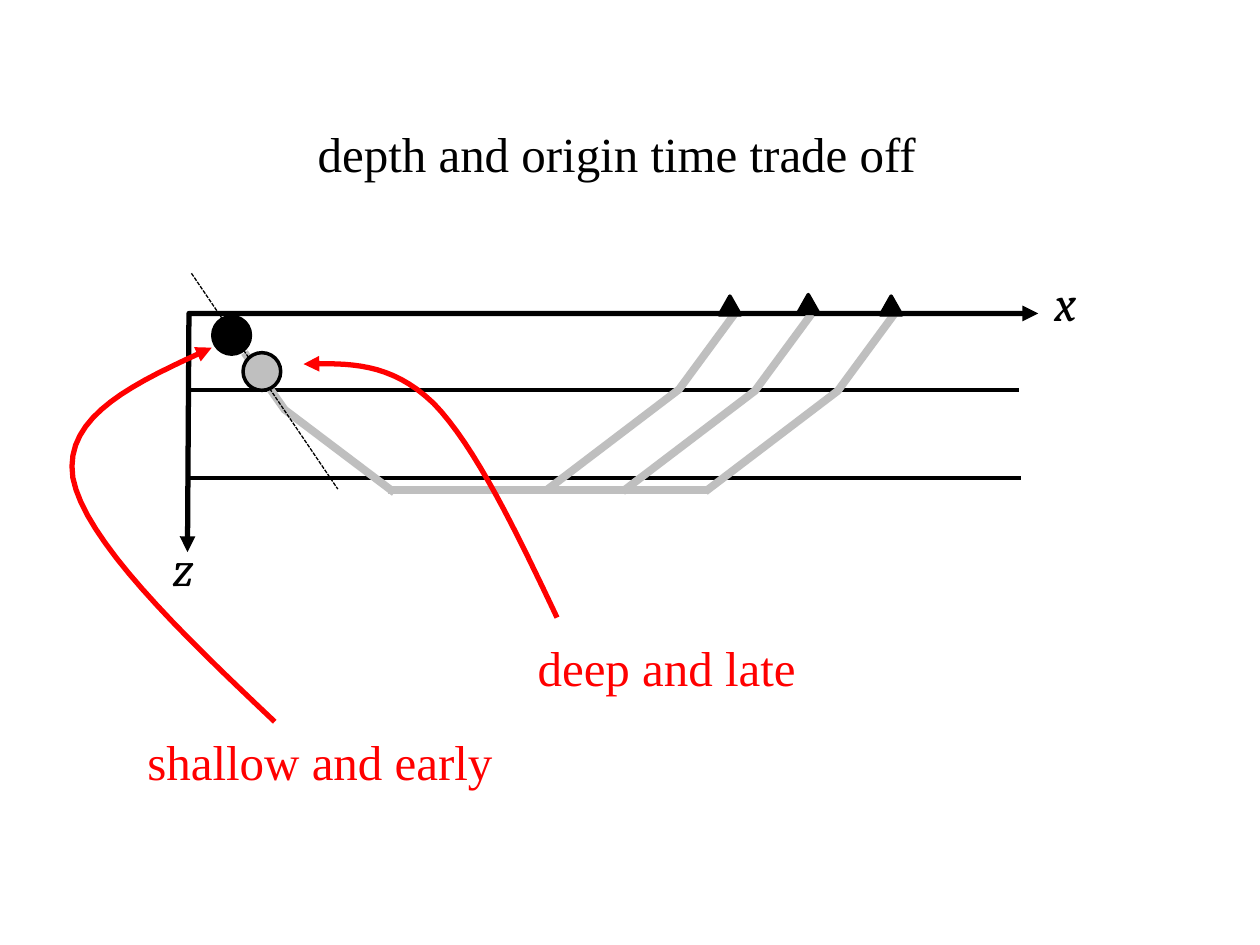
import pptx
import pptx.dml.color
import pptx.enum.dml
import pptx.enum.shapes
import pptx.enum.text
import pptx.oxml
import pptx.oxml.ns
import pptx.util
from pptx.util import Cm

BLACK = pptx.dml.color.RGBColor(0x00, 0x00, 0x00)
GREY = pptx.dml.color.RGBColor(0xBF, 0xBF, 0xBF)
RED = pptx.dml.color.RGBColor(0xFF, 0x00, 0x00)
SERIF = "Times New Roman"
SYMBOL = "Cambria"
CURVE_STEPS = 16


def format_line(shape, color, width, ends=()):
    shape.line.color.rgb = color
    shape.line.width = pptx.util.Pt(width)
    line_element = shape.line._get_or_add_ln()
    for end in ends:
        arrowhead = pptx.oxml.parse_xml(
            f'<a:{end} {pptx.oxml.ns.nsdecls("a")} type="triangle"/>'
        )
        line_element.append(arrowhead)


def add_straight_line(slide, start, end, color, width):
    connector = slide.shapes.add_connector(
        pptx.enum.shapes.MSO_CONNECTOR.STRAIGHT,
        Cm(start[0]), Cm(start[1]), Cm(end[0]), Cm(end[1]),
    )
    format_line(connector, color, width)
    effects = pptx.oxml.parse_xml(f'<a:effectLst {pptx.oxml.ns.nsdecls("a")}/>')
    connector._element.spPr.append(effects)
    return connector


def add_path(slide, points, color, width, ends=()):
    corners = [(Cm(x), Cm(y)) for x, y in points]
    builder = slide.shapes.build_freeform(*corners[0])
    builder.add_line_segments(corners[1:], close=False)
    shape = builder.convert_to_shape()
    shape.shadow.inherit = False
    shape.fill.background()
    format_line(shape, color, width, ends)


def bezier_point(controls, t):
    weights = ((1 - t) ** 3, 3 * t * (1 - t) ** 2, 3 * t ** 2 * (1 - t), t ** 3)
    return tuple(
        sum(weight * control[axis] for weight, control in zip(weights, controls))
        for axis in (0, 1)
    )


def add_curved_arrow(slide, controls):
    points = [controls[0]]
    for first in range(0, len(controls) - 1, 3):
        segment = controls[first:first + 4]
        points += [
            bezier_point(segment, step / CURVE_STEPS)
            for step in range(1, CURVE_STEPS + 1)
        ]
    add_path(slide, points, RED, 3, ["headEnd"])


def add_marker(slide, kind, left, top, width, height, color):
    shape = slide.shapes.add_shape(kind, Cm(left), Cm(top), Cm(width), Cm(height))
    shape.shadow.inherit = False
    shape.fill.solid()
    shape.fill.fore_color.rgb = color
    format_line(shape, BLACK, 2)


def format_text(shape, text, font_name, color, alignment, italic=False):
    text_frame = shape.text_frame
    text_frame.text = text
    text_frame.word_wrap = True
    text_frame.auto_size = pptx.enum.text.MSO_AUTO_SIZE.SHAPE_TO_FIT_TEXT
    text_frame.vertical_anchor = pptx.enum.text.MSO_ANCHOR.TOP
    paragraph = text_frame.paragraphs[0]
    paragraph.alignment = alignment
    font = paragraph.runs[0].font
    font.name = font_name
    font.size = pptx.util.Pt(28)
    font.italic = italic
    font.color.rgb = color


def add_label(slide, text, left, top, width, font_name, color, italic=False):
    label = slide.shapes.add_textbox(Cm(left), Cm(top), Cm(width), Cm(1.45))
    format_text(label, text, font_name, color, pptx.enum.text.PP_ALIGN.CENTER, italic)


def set_title(slide, text):
    title = slide.shapes.title
    title.left, title.top = Cm(6.15), Cm(2.36)
    title.width, title.height = Cm(12.7), Cm(1.45)
    format_text(title, text, SERIF, BLACK, pptx.enum.text.PP_ALIGN.LEFT)


def add_layers(slide):
    axes = [(3.78, 11.13), (3.81, 6.32), (20.93, 6.32)]
    add_path(slide, axes, BLACK, 3, ["headEnd", "tailEnd"])
    for left, depth in [(3.81, 9.63), (3.78, 7.87)]:
        add_straight_line(slide, (left, depth), (left + 16.77, depth), BLACK, 2.25)


def add_rays(slide):
    add_path(slide, [(7.95, 9.93), (5.74, 8.26), (4.93, 7.11)], GREY, 4.5)
    add_straight_line(slide, (7.82, 9.88), (14.3, 9.88), GREY, 4.5)
    for x, y in [(14.22, 9.91), (12.55, 9.91), (11.02, 9.88)]:
        ray = [(x, y), (x + 2.67, y - 2.03), (x + 3.81, y - 3.58)]
        add_path(slide, ray, GREY, 4.5)


def add_stations(slide):
    triangle = pptx.enum.shapes.MSO_SHAPE.ISOSCELES_TRIANGLE
    for left, top in [(14.5, 5.97), (16.08, 5.94), (17.75, 5.97)]:
        add_marker(slide, triangle, left, top, 0.43, 0.38, BLACK)


def add_sources(slide):
    trend = add_straight_line(slide, (3.86, 5.51), (6.81, 9.86), BLACK, 0.75)
    trend.line.dash_style = pptx.enum.dml.MSO_LINE.SQUARE_DOT
    for left, top, color in [(4.29, 6.38, BLACK), (4.9, 7.11, GREY)]:
        add_marker(
            slide, pptx.enum.shapes.MSO_SHAPE.OVAL, left, top, 0.76, 0.76, color
        )


def main():
    presentation = pptx.Presentation()
    presentation.slide_width = Cm(25.4)
    presentation.slide_height = Cm(19.05)
    slide = presentation.slides.add_slide(presentation.slide_layouts[5])

    set_title(slide, "depth and origin time trade off")
    add_layers(slide)
    add_rays(slide)
    add_stations(slide)
    add_sources(slide)
    add_label(slide, "z", 2.74, 10.72, 1.91, SYMBOL, BLACK, italic=True)
    add_label(slide, "x", 20.52, 5.36, 1.91, SYMBOL, BLACK, italic=True)

    add_curved_arrow(slide, [
        (4.27, 7.01), (2.77, 7.7), (1.27, 8.36), (1.47, 9.63),
        (1.7, 10.87), (3.61, 12.73), (5.54, 14.55),
    ])
    add_label(slide, "shallow and early", 1.47, 14.63, 9.96, SERIF, RED)
    add_curved_arrow(slide, [
        (6.12, 7.34), (7.01, 7.32), (7.87, 7.29), (8.74, 8.13),
        (9.58, 8.99), (10.41, 10.72), (11.23, 12.45),
    ])
    add_label(slide, "deep and late", 8.46, 12.73, 9.96, SERIF, RED)
    presentation.save("out.pptx")


if __name__ == "__main__":
    main()
